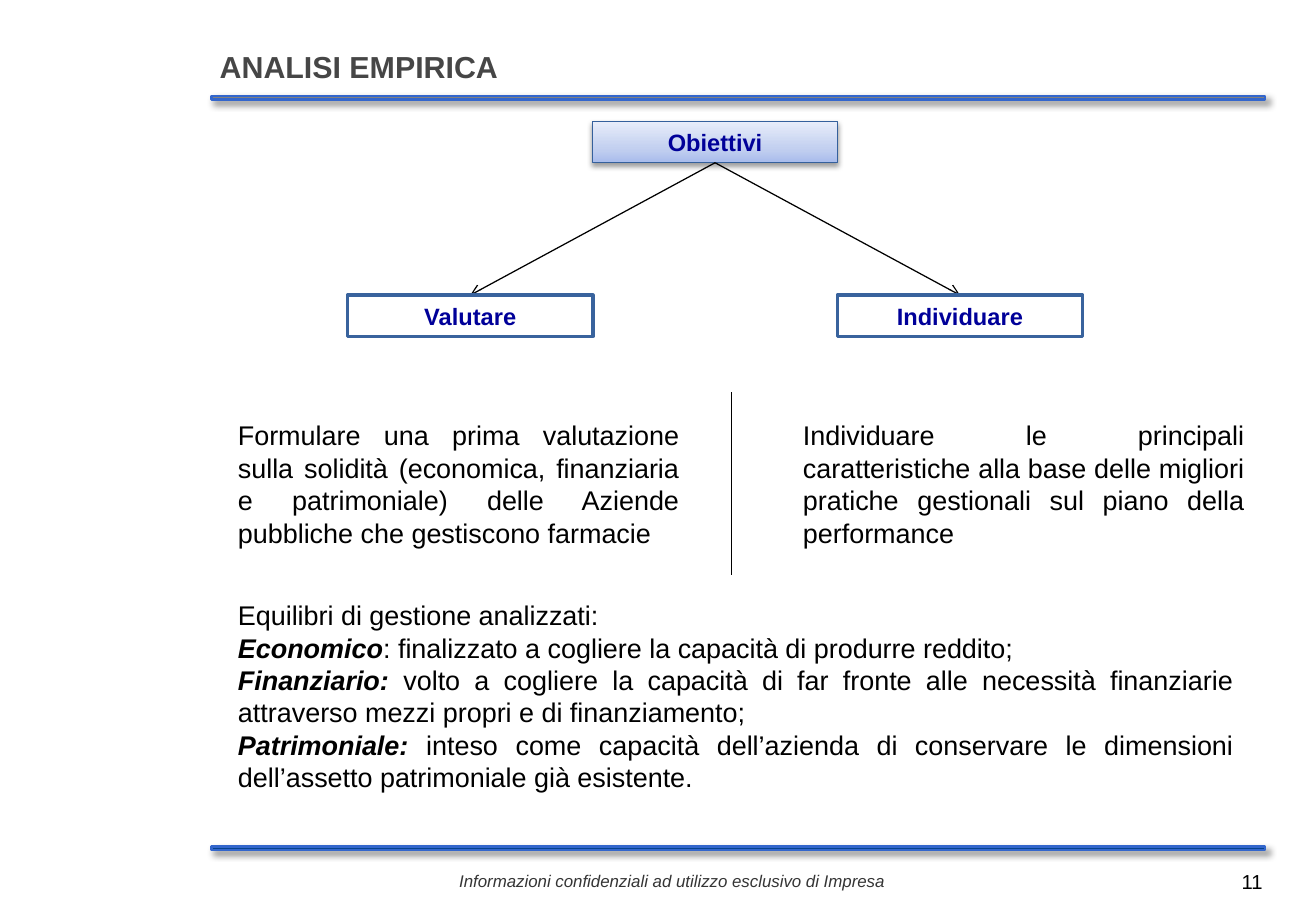
from copy import deepcopy
from dataclasses import dataclass
from lxml.etree import SubElement
from pptx import Presentation
from pptx.dml.color import RGBColor
from pptx.enum.shapes import MSO_CONNECTOR, MSO_SHAPE
from pptx.enum.text import MSO_ANCHOR, PP_ALIGN
from pptx.oxml.ns import qn
from pptx.util import Inches, Pt


@dataclass(frozen=True)
class Theme:
    font: str = "Arial"
    title: str = "464646"
    footer: str = "353535"
    text: str = "000000"
    label: str = "000099"
    white: str = "FFFFFF"
    rule_edge: str = "3366CC"
    top_rule: str = "808080"
    bottom_rule: str = "05438D"
    goal_edge: str = "35609C"
    branch_edge: str = "39639D"
    gradient: tuple = ((0, "A9BCEC"), (0.35, "C3D0F0"), (1, "E8EDFA"))
    title_size: int = 18
    body_size: int = 16
    label_size: int = 14
    page_size: int = 12
    footer_size: int = 10


T = Theme()
GOALS = [
    ("Valutare", "Formulare una prima valutazione sulla solidità (economica, finanziaria "
     "e patrimoniale) delle Aziende pubbliche che gestiscono farmacie"),
    ("Individuare", "Individuare le principali caratteristiche alla base delle migliori "
     "pratiche gestionali sul piano della performance"),
]
BALANCES = [
    ("", "Equilibri di gestione analizzati:"),
    ("Economico", ": finalizzato a cogliere la capacità di produrre reddito;"),
    ("Finanziario:", " volto a cogliere la capacità di far fronte alle necessità finanziarie "
     "attraverso mezzi propri e di finanziamento;"),
    ("Patrimoniale:", " inteso come capacità dell’azienda di conservare le dimensioni "
     "dell’assetto patrimoniale già esistente."),
]


def rgb(value):
    return RGBColor.from_string(value)


def add_text(s, box, paragraphs, size, color, align=PP_ALIGN.LEFT, bold=None, italic=None, wrap=True):
    """Each paragraph is a pair: bold italic lead, plain remainder."""
    tf = s.shapes.add_textbox(*map(Inches, box)).text_frame
    tf.word_wrap = wrap
    for i, (lead, rest) in enumerate(paragraphs):
        p = tf.paragraphs[0] if i == 0 else tf.add_paragraph()
        p.alignment = align
        font = p.font
        font.name, font.size, font.bold, font.italic = T.font, Pt(size), bold, italic
        font.color.rgb = rgb(color)
        if lead:
            r = p.add_run()
            r.text = lead
            r.font.bold = r.font.italic = True
        p.add_run().text = rest


def add_box(s, box, fill, edge, width):
    sp = s.shapes.add_shape(MSO_SHAPE.RECTANGLE, *map(Inches, box))
    sp.shadow.inherit = False
    if fill:
        sp.fill.solid()
        sp.fill.fore_color.rgb = rgb(fill)
    sp.line.color.rgb = rgb(edge)
    sp.line.width = Pt(width)
    return sp


def add_shadow(sp, alpha, blur, dist, angle):
    effects = sp._element.spPr.find(qn("a:effectLst"))
    shadow = SubElement(effects, qn("a:outerShdw"), blurRad=str(Pt(blur)), dist=str(Pt(dist)),
                        dir=str(angle * 60000), algn="ctr", rotWithShape="0")
    color = SubElement(shadow, qn("a:srgbClr"), val=T.text)
    SubElement(color, qn("a:alpha"), val=str(alpha * 1000))


def add_gradient(sp):
    sp.fill.gradient()
    sp.fill.gradient_angle = 90
    stops = sp._element.spPr.find(qn("a:gradFill")).find(qn("a:gsLst"))
    stops.insert(1, deepcopy(stops[0]))
    for stop, (position, color) in zip(sp.fill.gradient_stops, T.gradient):
        stop.position = position
        stop.color.rgb = rgb(color)


def add_label(sp, text):
    tf = sp.text_frame
    tf.word_wrap = True
    tf.vertical_anchor = MSO_ANCHOR.MIDDLE
    p = tf.paragraphs[0]
    p.text = text
    p.alignment = PP_ALIGN.CENTER
    p.font.name, p.font.size, p.font.bold = T.font, Pt(T.label_size), True
    p.font.color.rgb = rgb(T.label)


def add_line(s, start, end, arrow=False):
    line = s.shapes.add_connector(MSO_CONNECTOR.STRAIGHT, *map(Inches, (*start, *end)))
    line.line.color.rgb = rgb(T.text)
    line.line.width = Pt(0.75)
    if arrow:
        SubElement(line.line._get_or_add_ln(), qn("a:tailEnd"), type="arrow")
    SubElement(line._element.spPr, qn("a:effectLst"))


def add_frame(s, x, y, w, h):
    # Rules above and below the content
    for top, fill in ((y, T.top_rule), (y + h, T.bottom_rule)):
        add_shadow(add_box(s, (x, top, w, 0.03), fill, T.rule_edge, 1.5), 40, 4, 3, 45)
    # Title, footer and page number
    add_text(s, (x - 0.03, y - 0.44, 7.53, 0.4), [("", "ANALISI EMPIRICA")],
             T.title_size, T.title, bold=True)
    add_text(s, (x + 1.94, y + h + 0.15, 3.82, 0.27),
             [("", "Informazioni confidenziali ad utilizzo esclusivo di Impresa")],
             T.footer_size, T.footer, italic=True, wrap=False)
    add_text(s, (x + w - 2.25, y + h + 0.14, 2.33, 0.4), [("", "11")],
             T.page_size, T.text, PP_ALIGN.RIGHT)


def add_goal_tree(s, x, y, w, h):
    box_w, box_h = 2.02, 0.34
    middle = x + w / 2
    # Root
    root = add_box(s, (middle - box_w / 2, y, box_w, box_h), None, T.goal_edge, 0.75)
    add_gradient(root)
    add_shadow(root, 38, 3.1, 1.6, 90)
    add_label(root, "Obiettivi")
    # Branches
    branch_y = y + h - box_h
    for left, (name, _) in zip((x, x + w - box_w), GOALS):
        add_line(s, (middle, y + box_h), (left + box_w / 2, branch_y), arrow=True)
        add_label(add_box(s, (left, branch_y, box_w, box_h), T.white, T.branch_edge, 2), name)


def add_goal_columns(s, x, y, w, h):
    col_w = 3.83
    for left, (_, text) in zip((x, x + w - col_w), GOALS):
        add_text(s, (left, y + 0.17, col_w, 1.18), [("", text)],
                 T.body_size, T.text, PP_ALIGN.JUSTIFY)
    add_line(s, (x + 4.16, y), (x + 4.16, y + h))


def add_balances(s, x, y, w, h):
    add_text(s, (x, y, w, h), BALANCES, T.body_size, T.text, PP_ALIGN.JUSTIFY)


def main():
    prs = Presentation()
    prs.slide_width, prs.slide_height = Inches(10.83), Inches(7.5)
    s = prs.slides.add_slide(prs.slide_layouts[6])
    add_frame(s, 1.74, 0.79, 8.67, 6.18)
    add_goal_tree(s, 2.86, 1, 6.05, 1.77)
    add_goal_columns(s, 1.86, 3.23, 8.48, 1.5)
    add_balances(s, 1.86, 4.88, 8.39, 1.72)
    prs.save("out.pptx")


if __name__ == "__main__":
    main()
